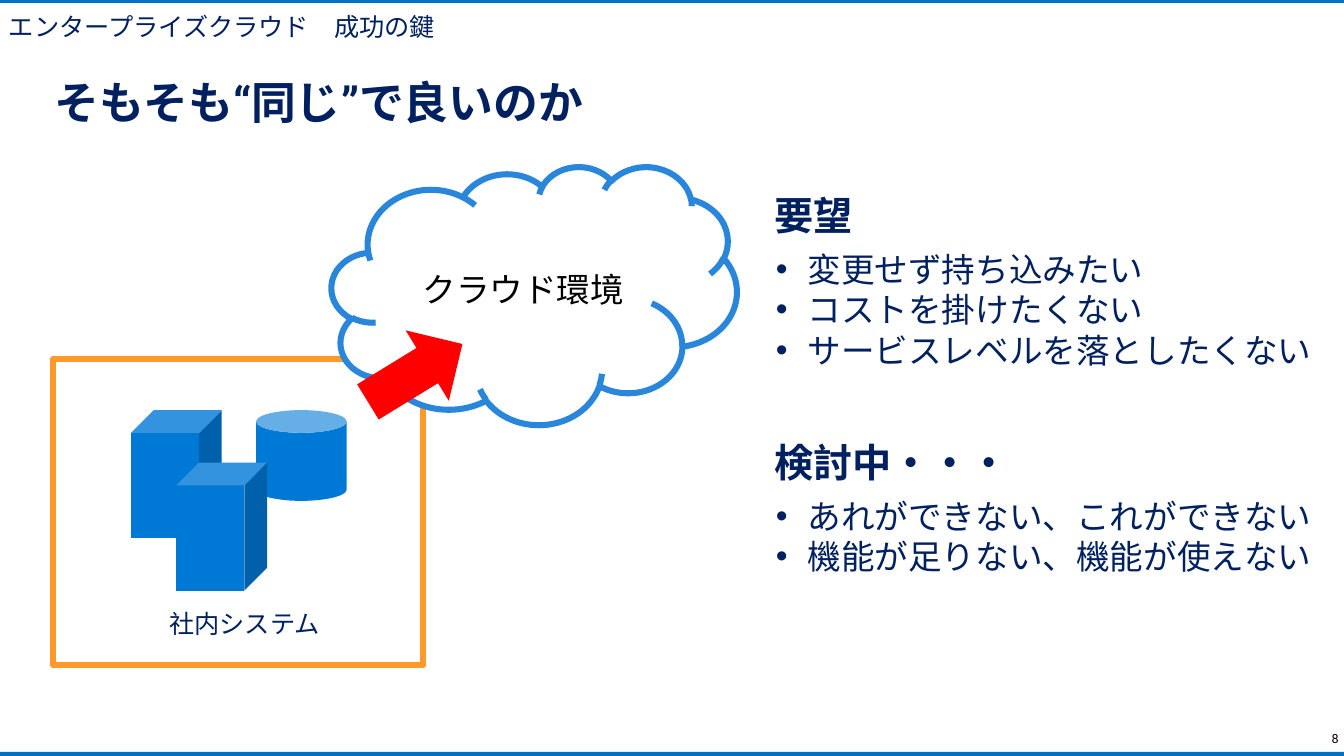
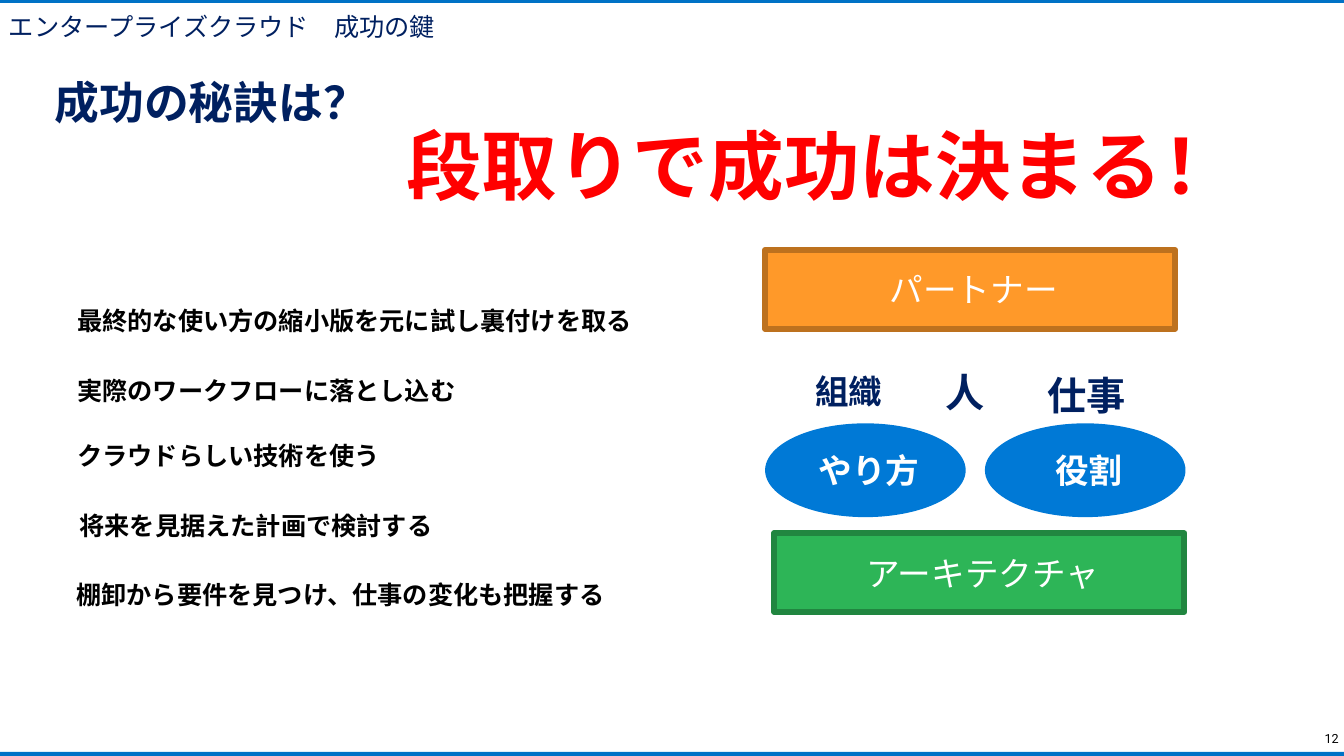
"""Build two slides on the keys to success with enterprise cloud."""
from lxml.etree import SubElement
from pptx import Presentation
from pptx.dml.color import RGBColor
from pptx.enum.shapes import MSO_SHAPE
from pptx.enum.text import MSO_ANCHOR, MSO_AUTO_SIZE, PP_ALIGN
from pptx.oxml.ns import qn
from pptx.util import Pt

COLORS = {
    "navy": "002060", "band": "0072C6", "blue": "0079D6", "sky": "2A86DA",
    "orange": "FF9929", "brown": "BD711E", "green": "2DB557", "forest": "218640",
    "red": "FF0000", "black": "000000", "white": "FFFFFF",
}
HEADER = "エンタープライズクラウド　成功の鍵"


def write(holder, lines, size, color="navy", bold=False, align=PP_ALIGN.LEFT,
          anchor=MSO_ANCHOR.TOP, font="Roboto", bullet=False):
    """Fill a text holder with equally formatted paragraphs."""
    frame = holder.text_frame
    frame.text = "\n".join(lines)
    frame.word_wrap = True
    frame.auto_size = MSO_AUTO_SIZE.NONE
    frame.vertical_anchor = anchor
    for paragraph in frame.paragraphs:
        paragraph.alignment = align
        paragraph.font.size = Pt(size)
        paragraph.font.bold = bold
        paragraph.font.color.rgb = RGBColor.from_string(COLORS[color])
        paragraph.font.name = font
        properties = paragraph._p.get_or_add_pPr()
        defaults = properties.find(qn("a:defRPr"))
        SubElement(defaults, qn("a:ea")).set("typeface", font)
        if bullet:
            properties.set("marL", str(Pt(22.5)))
            properties.set("indent", str(-Pt(22.5)))
            mark_font = properties.makeelement(qn("a:buFont"), {"typeface": "Arial"})
            mark = properties.makeelement(qn("a:buChar"), {"char": "•"})
            defaults.addprevious(mark_font)
            defaults.addprevious(mark)


def draw(slide, kind, box, fill, line=None, label=None, color="white", bold=False):
    """Add a flat preset shape, with a centred label if one is given."""
    shape = slide.shapes.add_shape(kind, *map(Pt, box))
    shape.shadow.inherit = False
    shape.fill.solid()
    shape.fill.fore_color.rgb = RGBColor.from_string(COLORS[fill])
    if line:
        shape.line.color.rgb = RGBColor.from_string(COLORS[line])
        shape.line.width = Pt(4.33)
    else:
        shape.line.fill.background()
    if label:
        write(shape, [label], 24, color, bold, PP_ALIGN.CENTER, MSO_ANCHOR.MIDDLE,
              "Noto Sans CJK JP")
        shape.text_frame.margin_left = Pt(8.6)
        shape.text_frame.margin_right = Pt(3.6)
    return shape


prs = Presentation()
prs.slide_width, prs.slide_height = Pt(960), Pt(540)

slides = []
for title, number in [("そもそも“同じ”で良いのか", "8"), ("成功の秘訣は？", "12")]:
    slide = prs.slides.add_slide(prs.slide_layouts[5])
    for band_top in (537.1, -0.7):
        draw(slide, MSO_SHAPE.RECTANGLE, (0, band_top, 960, 2.9), "band")
    page_number = slide.shapes.add_textbox(Pt(910.8), Pt(518.4), Pt(52.6), Pt(18))
    write(page_number, [number], 9, "black", align=PP_ALIGN.RIGHT, anchor=MSO_ANCHOR.MIDDLE)
    header = slide.shapes.add_textbox(Pt(-0.7), Pt(4.3), Pt(330), Pt(29))
    write(header, [HEADER], 18)
    heading = slide.shapes.title
    heading.left, heading.top, heading.width, heading.height = Pt(31.7), Pt(49.7), Pt(398), Pt(46)
    write(heading, [title], 32, bold=True)
    slides.append(slide)

migration, success = slides

draw(migration, MSO_SHAPE.RECTANGLE, (38.2, 256.3, 264.2, 218.9), "white", "orange")
for kind, left, top, height in [
    (MSO_SHAPE.CAN, 182.9, 293, 64.8),
    (MSO_SHAPE.CUBE, 93.6, 293, 91.4),
    (MSO_SHAPE.CUBE, 126, 330.5, 91.4),
]:
    draw(migration, kind, (left, top, 64.8, height), "blue")
in_house = migration.shapes.add_textbox(Pt(113.8), Pt(430.6), Pt(126), Pt(29))
write(in_house, ["社内システム"], 18)
draw(migration, MSO_SHAPE.CLOUD, (236.9, 118.8, 289.4, 184.3), "white", "sky",
     "クラウド環境", "black")
move = draw(migration, MSO_SHAPE.RIGHT_ARROW, (257, 236.9, 79.2, 59), "red")
move.rotation = 328.5

for top, topic, points in [
    (133.2, "要望", ["変更せず持ち込みたい", "コストを掛けたくない", "サービスレベルを落としたくない"]),
    (309.6, "検討中・・・", ["あれができない、これができない", "機能が足りない、機能が使えない"]),
]:
    topic_box = migration.shapes.add_textbox(Pt(545.8), Pt(top), Pt(190), Pt(41))
    write(topic_box, [topic], 28, bold=True)
    points_box = migration.shapes.add_textbox(
        Pt(547.2), Pt(top + 41), Pt(405), Pt(7.2 + 29 * len(points)))
    write(points_box, points, 24, bullet=True)

for text, left, top, width, height, size, color in [
    ("段取りで成功は決まる！", 283, 81.4, 620, 73, 54, "red"),
    ("組織", 575.3, 261.4, 64, 36, 24, "navy"),
    ("人", 668.2, 259.2, 44, 41, 28, "navy"),
    ("仕事", 740.9, 261.4, 72, 41, 28, "navy"),
    ("最終的な使い方の縮小版を元に試し裏付けを取る", 48.2, 214.6, 416, 29, 18, "black"),
    ("実際のワークフローに落とし込む", 48.2, 264.2, 416, 29, 18, "black"),
    ("クラウドらしい技術を使う", 48.2, 311, 416, 29, 18, "black"),
    ("将来を見据えた計画で検討する", 49.7, 360.7, 416, 29, 18, "black"),
    ("棚卸から要件を見つけ、仕事の変化も把握する", 47.5, 410.4, 416, 29, 18, "black"),
]:
    phrase = success.shapes.add_textbox(Pt(left), Pt(top), Pt(width), Pt(height))
    write(phrase, [text], size, color, bold=True)

for label, left in [("やり方", 546.5), ("役割", 703.5)]:
    draw(success, MSO_SHAPE.OVAL, (left, 302.4, 143.3, 67), "blue", label=label, bold=True)
for label, left, top, fill, line in [
    ("パートナー", 546.5, 178.6, "orange", "brown"),
    ("アーキテクチャ", 553, 380.9, "green", "forest"),
]:
    draw(success, MSO_SHAPE.RECTANGLE, (left, top, 293, 56.2), fill, line, label)

prs.save("out.pptx")
